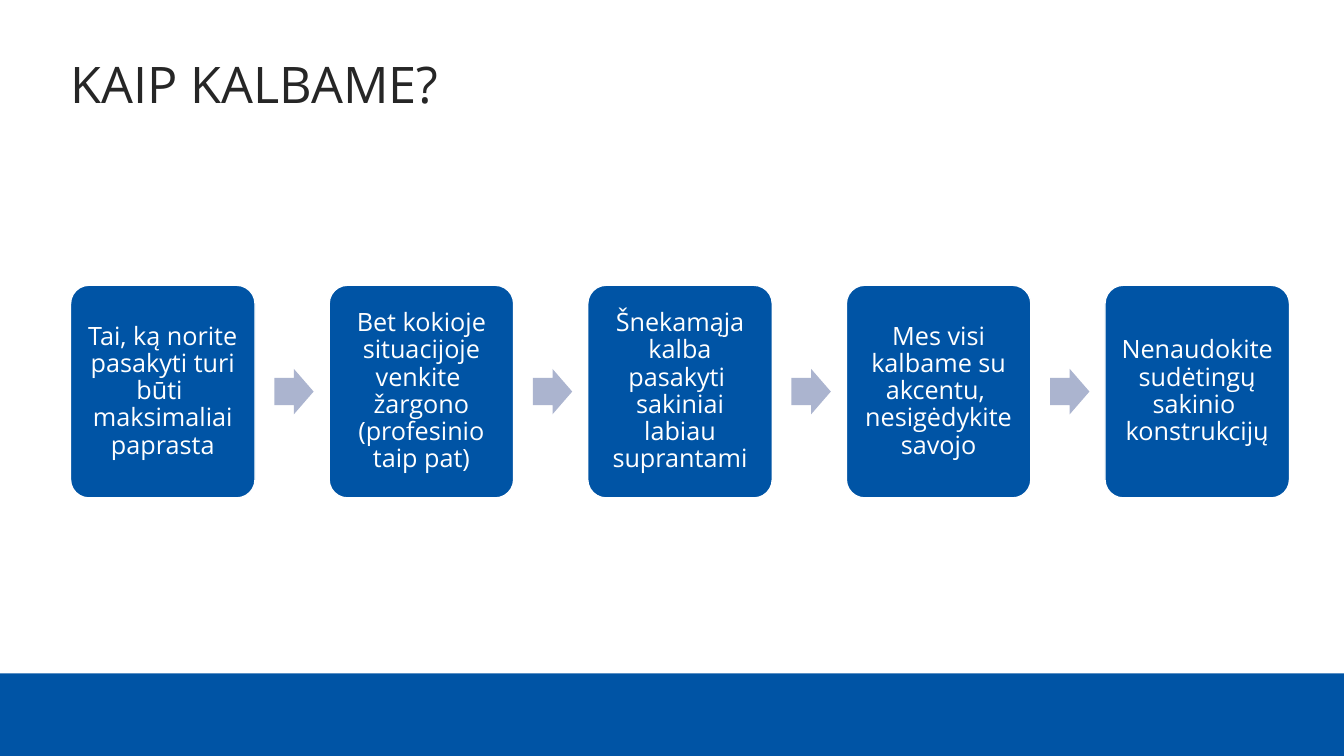
from dataclasses import dataclass

from pptx import Presentation
from pptx.dml.color import RGBColor
from pptx.enum.shapes import MSO_SHAPE
from pptx.enum.text import MSO_ANCHOR, MSO_AUTO_SIZE, PP_ALIGN
from pptx.util import Inches, Pt


@dataclass(frozen=True)
class Theme:
    blue: RGBColor = RGBColor(0x00, 0x54, 0xA5)
    arrow: RGBColor = RGBColor(0xAB, 0xB4, 0xCF)
    white: RGBColor = RGBColor(0xFF, 0xFF, 0xFF)
    title: RGBColor = RGBColor(0x26, 0x26, 0x26)
    font: str = "Open Sans"
    title_size: Pt = Pt(36)
    step_size: Pt = Pt(18)


THEME = Theme()
SLIDE_WIDTH, SLIDE_HEIGHT = 13.33, 7.5
FOOTER_HEIGHT = 0.82

STEPS = [
    "Tai, ką norite pasakyti turi būti \nmaksimaliai paprasta",
    "Bet kokioje situacijoje venkite \nžargono (profesinio taip pat)",
    "Šnekamąja kalba pasakyti \nsakiniai labiau suprantami",
    "Mes visi kalbame su akcentu, \nnesigėdykite savojo",
    "Nenaudokite sudėtingų sakinio \nkonstrukcijų",
]
FIRST_LEFT, LAST_LEFT = 0.7, 10.96
STEP_PITCH = (LAST_LEFT - FIRST_LEFT) / (len(STEPS) - 1)
STEP_TOP, STEP_WIDTH, STEP_HEIGHT = 2.83, 1.83, 2.11
ARROW_WIDTH, ARROW_HEIGHT = 0.39, 0.45
ARROW_GAP = 0.19
STEP_INSET = 0.07


def style_paragraph(paragraph, size, color, alignment):
    paragraph.alignment = alignment
    paragraph.line_spacing = 0.9
    paragraph.font.name = THEME.font
    paragraph.font.size = size
    paragraph.font.color.rgb = color


def add_filled_shape(slide, kind, left, top, width, height, color):
    shape = slide.shapes.add_shape(
        kind, Inches(left), Inches(top), Inches(width), Inches(height)
    )
    shape.shadow.inherit = False
    shape.fill.solid()
    shape.fill.fore_color.rgb = color
    shape.line.fill.background()
    return shape


def add_title(slide, text):
    title = slide.shapes.title
    title.left, title.top = Inches(0.6), Inches(0.3)
    title.width, title.height = Inches(12.1), Inches(0.89)
    frame = title.text_frame
    frame.text = text
    frame.auto_size = MSO_AUTO_SIZE.NONE
    frame.vertical_anchor = MSO_ANCHOR.BOTTOM
    style_paragraph(frame.paragraphs[0], THEME.title_size, THEME.title, PP_ALIGN.LEFT)


def add_step(slide, left, text):
    step = add_filled_shape(
        slide, MSO_SHAPE.ROUNDED_RECTANGLE,
        left, STEP_TOP, STEP_WIDTH, STEP_HEIGHT, THEME.blue,
    )
    step.adjustments[0] = 0.1
    step.line.color.rgb = THEME.white
    step.line.width = Pt(1)
    frame = step.text_frame
    frame.word_wrap = True
    frame.vertical_anchor = MSO_ANCHOR.MIDDLE
    frame.margin_left = frame.margin_right = Inches(STEP_INSET)
    frame.margin_top = frame.margin_bottom = Inches(STEP_INSET)
    paragraph = frame.paragraphs[0]
    paragraph.text = text
    style_paragraph(paragraph, THEME.step_size, THEME.white, PP_ALIGN.CENTER)


def add_arrow(slide, left):
    top = STEP_TOP + (STEP_HEIGHT - ARROW_HEIGHT) / 2
    arrow = add_filled_shape(
        slide, MSO_SHAPE.RIGHT_ARROW,
        left, top, ARROW_WIDTH, ARROW_HEIGHT, THEME.arrow,
    )
    arrow.adjustments[0] = 0.6
    arrow.adjustments[1] = 0.5


def main():
    presentation = Presentation()
    presentation.slide_width = Inches(SLIDE_WIDTH)
    presentation.slide_height = Inches(SLIDE_HEIGHT)
    slide = presentation.slides.add_slide(presentation.slide_layouts.get_by_name("Title Only"))

    add_filled_shape(
        slide, MSO_SHAPE.RECTANGLE,
        0, SLIDE_HEIGHT - FOOTER_HEIGHT, SLIDE_WIDTH, FOOTER_HEIGHT, THEME.blue,
    )
    add_title(slide, "KAIP KALBAME?")
    for index, text in enumerate(STEPS):
        left = FIRST_LEFT + index * STEP_PITCH
        if index > 0:
            add_arrow(slide, left - STEP_PITCH + STEP_WIDTH + ARROW_GAP)
        add_step(slide, left, text)

    presentation.save("out.pptx")


if __name__ == "__main__":
    main()
